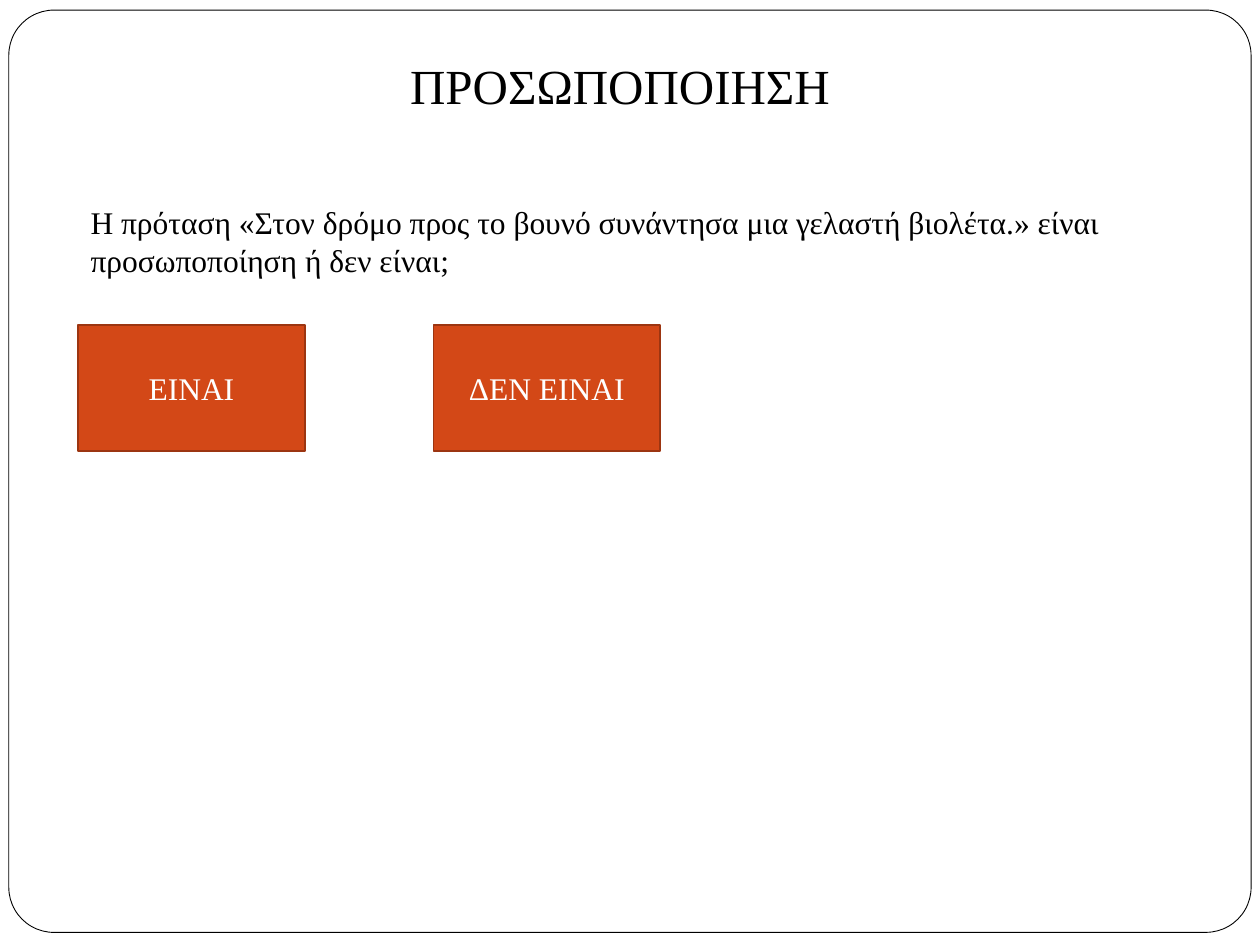
from pptx import Presentation
from pptx.dml.color import RGBColor
from pptx.enum.shapes import MSO_SHAPE as Kind
from pptx.enum.text import MSO_ANCHOR as Anchor, PP_ALIGN as Align
from pptx.util import Inches, Pt

TITLE = "ΠΡΟΣΩΠΟΠΟΙΗΣΗ"
QUERY = ("Η πρόταση «Στον δρόμο προς το βουνό συνάντησα μια γελαστή βιολέτα.» "
         "είναι προσωποποίηση ή δεν είναι;")
CHOICES = ["ΕΙΝΑΙ", "ΔΕΝ ΕΙΝΑΙ"]

FONT = "Times New Roman"
BLACK = RGBColor(0x00, 0x00, 0x00)
WHITE = RGBColor(0xFF, 0xFF, 0xFF)
ORANGE = RGBColor(0xD3, 0x48, 0x17)
RUST = RGBColor(0x9C, 0x35, 0x11)

LEFT, WIDTH = 0.62, 8.28
STEP = 2.82


def place(shape, *box):
    shape.left, shape.top, shape.width, shape.height = map(Inches, box)


def write(shape, text, size, color, align, anchor):
    frame = shape.text_frame
    frame.word_wrap = True
    frame.vertical_anchor = anchor
    para = frame.paragraphs[0]
    para.alignment = align
    run = para.add_run()
    run.text = text
    run.font.name = FONT
    run.font.size = Pt(size)
    run.font.color.rgb = color


def draw(slide, kind, box, fill, line, weight):
    shape = slide.shapes.add_shape(kind, *map(Inches, box))
    shape.shadow.inherit = False
    shape.fill.solid()
    shape.fill.fore_color.rgb = fill
    shape.line.color.rgb = line
    shape.line.width = Pt(weight)
    return shape


def main():
    deck = Presentation()
    deck.slide_width, deck.slide_height = Inches(10), Inches(7.5)
    slide = deck.slides.add_slide(deck.slide_layouts[5])
    title = slide.shapes.title

    border = draw(slide, Kind.ROUNDED_RECTANGLE, (0.07, 0.08, 9.86, 7.32),
                  WHITE, BLACK, 0.5)
    border.adjustments[0] = 0.049
    title.element.addprevious(border.element)

    place(title, 0.78, 0.39, WIDTH, 0.57)
    write(title, TITLE, 28, BLACK, Align.CENTER, Anchor.TOP)

    query = slide.shapes.add_textbox(*map(Inches, (LEFT, 1.56, WIDTH, 0.71)))
    write(query, QUERY, 18, BLACK, Align.LEFT, Anchor.TOP)

    for i, text in enumerate(CHOICES):
        button = draw(slide, Kind.RECTANGLE, (LEFT + i * STEP, 2.58, 1.8, 1),
                      ORANGE, RUST, 1)
        write(button, text, 18, WHITE, Align.CENTER, Anchor.MIDDLE)

    deck.save("out.pptx")


if __name__ == "__main__":
    main()
